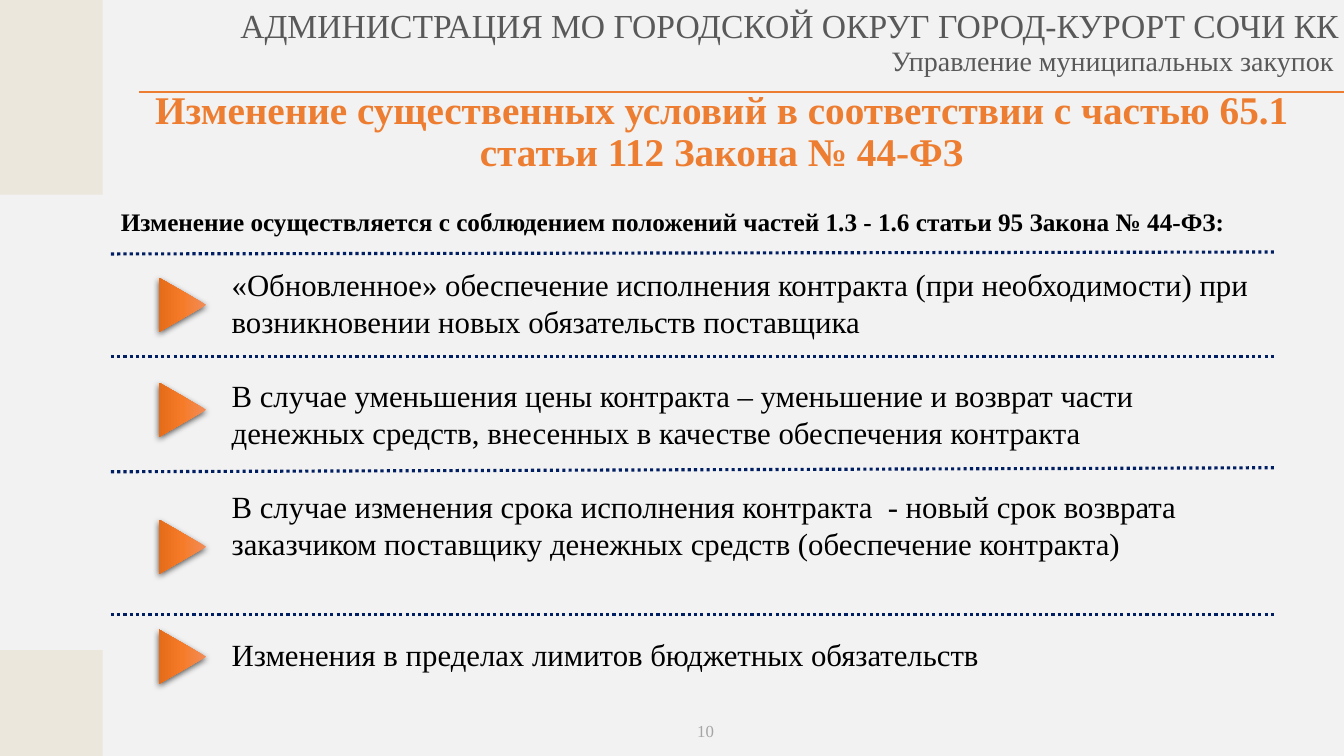
from lxml.etree import SubElement
from pptx import Presentation
from pptx.dml.color import RGBColor
from pptx.enum.dml import MSO_LINE
from pptx.enum.shapes import MSO_CONNECTOR, MSO_SHAPE
from pptx.enum.text import MSO_ANCHOR, PP_ALIGN
from pptx.oxml.ns import qn
from pptx.util import Pt

# Content
ORANGE, NAVY, GREY, BLACK = "ED7D31", "001E62", "595959", "000000"
SIDE_BLOCKS = [(0, 139), (464.4, 75.6)]  # top, height
TEXTS = [  # text, (left, top, width, height), font, paragraph format, anchor
    ("АДМИНИСТРАЦИЯ МО ГОРОДСКОЙ ОКРУГ ГОРОД-КУРОРТ СОЧИ КК",
     (153.4, 0, 810, 36), {"size": Pt(24)}, GREY,
     {"alignment": PP_ALIGN.RIGHT}, MSO_ANCHOR.TOP),
    ("Управление муниципальных закупок",
     (99.4, 30.2, 860.4, 33.1), {"size": Pt(20)}, GREY,
     {"alignment": PP_ALIGN.RIGHT, "line_spacing": 0.9}, MSO_ANCHOR.TOP),
    ("Изменение осуществляется с соблюдением положений частей 1.3 - 1.6 статьи 95 Закона № 44-ФЗ:",
     (79.2, 144, 888.5, 28.8), {"size": Pt(18), "bold": True}, BLACK,
     {}, MSO_ANCHOR.TOP),
    ("Изменение существенных условий в соответствии с частью 65.1 статьи 112 Закона № 44-ФЗ",
     (71.3, 49.7, 888.5, 90.7), {"size": Pt(28), "bold": True}, ORANGE,
     {"alignment": PP_ALIGN.CENTER, "line_spacing": 0.9}, MSO_ANCHOR.MIDDLE),
    ("10", (396, 511.2, 216, 28.8), {"size": Pt(12)}, "A5A5A5",
     {"alignment": PP_ALIGN.CENTER}, MSO_ANCHOR.TOP),
]
LINE_HEIGHT = 26.4
CONDITIONS = [  # text, blank lines' worth of space before
    ("«Обновленное» обеспечение исполнения контракта (при необходимости) при возникновении новых обязательств поставщика", 0),
    ("В случае уменьшения цены контракта – уменьшение и возврат части денежных средств, внесенных в качестве обеспечения контракта", 1),
    ("В случае изменения срока исполнения контракта  - новый срок возврата заказчиком поставщику денежных средств (обеспечение контракта)", 1),
    ("Изменения в пределах лимитов бюджетных обязательств", 2),
]
CONDITIONS_BOX = (158.4, 186.5, 745.2, 300.2)
MARKER_TOPS = [200.9, 275.8, 373.7, 452.2]
MARKER_STOPS = [(0, "F18C57"), (50, "F67B28"), (100, "E56C19")]
DIVIDERS = [(181.4, 180), (254.9, 254.9), (337, 334.1), (439.2, 439.2)]  # y at each end

presentation = Presentation()
presentation.slide_width, presentation.slide_height = Pt(960), Pt(540)
slide = presentation.slides.add_slide(presentation.slide_layouts[6])


def color(value):
    return RGBColor.from_string(value)


def points(values):
    return [Pt(value) for value in values]


def apply(target, settings):
    for name, value in settings.items():
        setattr(target, name, value)


def add_text_frame(box, anchor=MSO_ANCHOR.TOP):
    frame = slide.shapes.add_textbox(*points(box)).text_frame
    apply(frame, {"word_wrap": True, "vertical_anchor": anchor})
    return frame


def write(paragraph, text, font, font_color, layout):
    paragraph.text = text
    apply(paragraph, layout)
    run_font = paragraph.runs[0].font
    apply(run_font, {"name": "Times New Roman", **font})
    run_font.color.rgb = color(font_color)


def add_line(ends, width, line_color, dash=None):
    line = slide.shapes.add_connector(MSO_CONNECTOR.STRAIGHT, *points(ends))
    line.line.color.rgb = color(line_color)
    apply(line.line, {"width": Pt(width), "dash_style": dash})
    SubElement(line._element.spPr, qn("a:effectLst"))


def add_shape(kind, box):
    shape = slide.shapes.add_shape(kind, *points(box))
    shape.shadow.inherit = False
    shape.line.fill.background()
    return shape


def add_marker(top):
    marker = add_shape(MSO_SHAPE.ISOSCELES_TRIANGLE, (110.9, top, 38.9, 33.8))
    marker.rotation = 90
    marker.fill.gradient()
    marker.fill.gradient_angle = 270
    properties = marker._element.spPr
    stops = properties.find(".//" + qn("a:gsLst"))
    for stop in list(stops):
        stops.remove(stop)
    for position, value in MARKER_STOPS:
        stop = SubElement(stops, qn("a:gs"), pos=str(position * 1000))
        SubElement(stop, qn("a:srgbClr"), val=value)
    shadow = SubElement(properties.find(qn("a:effectLst")), qn("a:outerShdw"),
                        blurRad=str(Pt(4.5)), dist=str(Pt(1.5)), dir="5400000", rotWithShape="0")
    shade = SubElement(shadow, qn("a:srgbClr"), val=BLACK)
    SubElement(shade, qn("a:alpha"), val="63000")


# Background, side blocks and header rule
slide.background.fill.solid()
slide.background.fill.fore_color.rgb = color("F2F2F2")
for top, height in SIDE_BLOCKS:
    block = add_shape(MSO_SHAPE.RECTANGLE, (0, top, 73.4, height))
    block.fill.solid()
    block.fill.fore_color.rgb = color("EBE7DC")
add_line((99.4, 65.5, 960, 65.5), 1.5, ORANGE)

# Headings and page number
for text, box, font, font_color, layout, anchor in TEXTS:
    write(add_text_frame(box, anchor).paragraphs[0], text, font, font_color, layout)

# List of conditions
frame = add_text_frame(CONDITIONS_BOX)
for index, (text, gap) in enumerate(CONDITIONS):
    paragraph = frame.add_paragraph() if index else frame.paragraphs[0]
    layout = {"space_before": Pt(gap * LINE_HEIGHT)} if gap else {}
    write(paragraph, text, {"size": Pt(22)}, BLACK, layout)

# Markers and dividers
for top in MARKER_TOPS:
    add_marker(top)
for start, end in DIVIDERS:
    add_line((79.2, start, 910.1, end), 2.25, NAVY, MSO_LINE.ROUND_DOT)

presentation.save("out.pptx")
